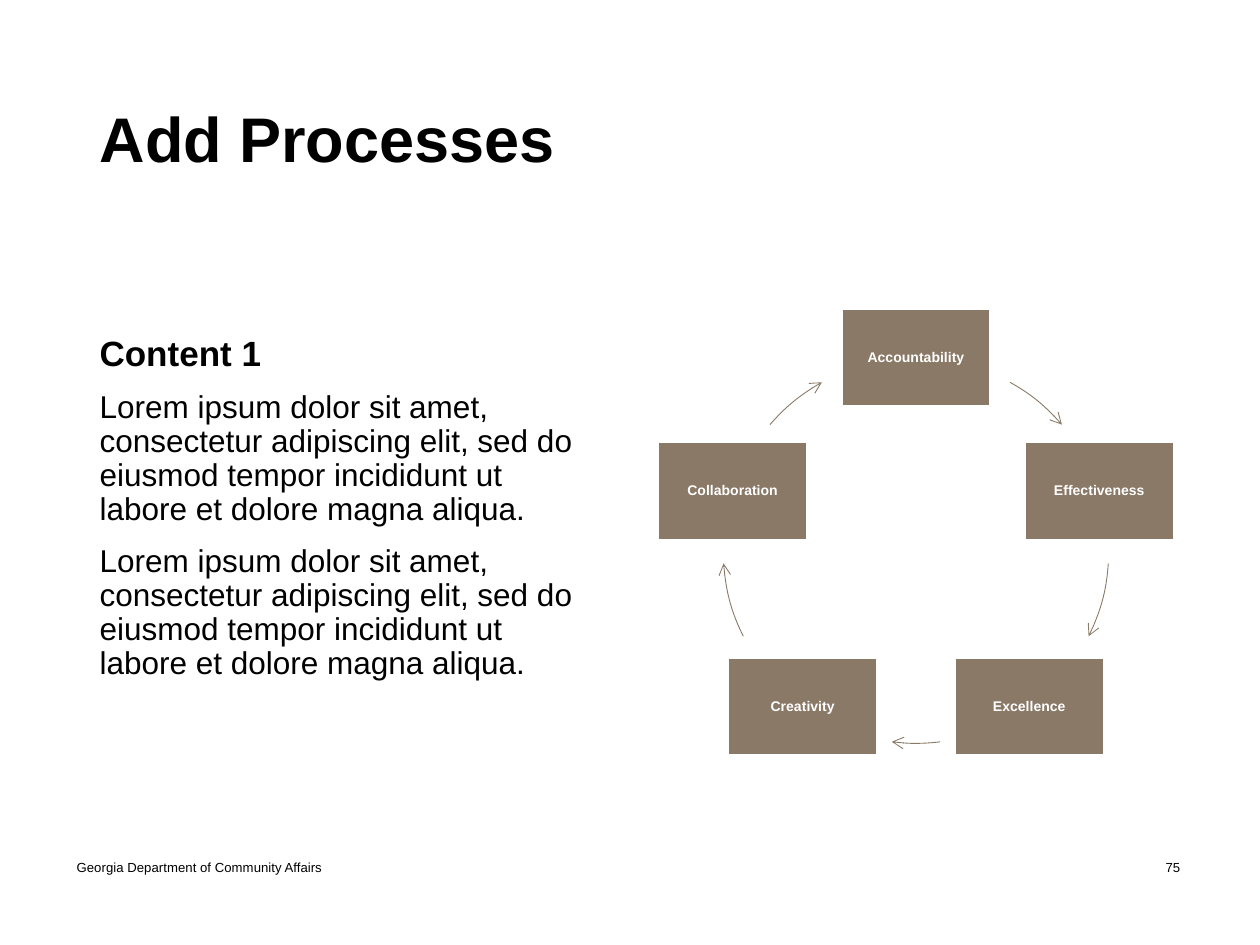
from math import cos, radians, sin

from lxml.etree import SubElement
from pptx import Presentation
from pptx.dml.color import RGBColor
from pptx.enum.shapes import MSO_SHAPE as Shape
from pptx.enum.text import MSO_ANCHOR as Anchor, MSO_AUTO_SIZE as AutoSize, PP_ALIGN as Align
from pptx.oxml.ns import qn
from pptx.util import Inches, Pt

COLORS = {"text": "000000", "accent": "8A7967", "light": "FFFFFF"}
LOREM = ("Lorem ipsum dolor sit amet, consectetur adipiscing elit, sed do "
         "eiusmod tempor incididunt ut labore et dolore magna aliqua.")
VALUES = ["Accountability", "Effectiveness", "Excellence", "Creativity", "Collaboration"]
# Start and end angles in degrees, clockwise from three o'clock
ARCS = [(299.2, 319.2), (3.8, 26.4), (82.8, 97.2), (153.6, 176.2), (220.8, 240.8)]
CENTER_X, CENTER_Y, RADIUS = 7.27, 4.37, 1.53
BOX_WIDTH, BOX_HEIGHT = 1.18, 0.77


def color(name):
    return RGBColor.from_string(COLORS[name])


class SlideBuilder:
    font = "Arial"

    def __init__(self, slide):
        self.slide = slide

    def style(self, paragraph, size, bold=False, fill="text", align=Align.LEFT, spacing=0.9):
        paragraph.alignment = align
        paragraph.line_spacing = spacing
        for run in paragraph.runs:
            run.font.name = self.font
            run.font.size = Pt(size)
            run.font.bold = bold
            run.font.color.rgb = color(fill)

    def place(self, shape, left, top, width, height):
        shape.left, shape.top = Inches(left), Inches(top)
        shape.width, shape.height = Inches(width), Inches(height)
        frame = shape.text_frame
        frame.word_wrap = True
        frame.auto_size = AutoSize.NONE
        frame.vertical_anchor = Anchor.MIDDLE
        return frame

    def title(self, text, *area):
        frame = self.place(self.slide.shapes.title, *area)
        frame.text = text
        self.style(frame.paragraphs[0], 36, bold=True)

    def body(self, heading, texts, *area):
        frame = self.place(self.slide.placeholders[1], *area)
        frame.margin_bottom = Inches(0.48)
        frame.text = "\n".join([heading, *texts])
        for index, paragraph in enumerate(frame.paragraphs):
            properties = paragraph._p.get_or_add_pPr()
            properties.set("marL", "0")
            properties.set("indent", "0")
            SubElement(properties, qn("a:buNone"))
            paragraph.space_before = Pt(10 if index else 0)
            self.style(paragraph, 18 if index else 20, bold=index == 0)

    def label(self, text, *area, align=Align.LEFT):
        frame = self.place(self.slide.shapes.add_textbox(0, 0, 0, 0), *area)
        frame.text = text
        self.style(frame.paragraphs[0], 7.5, align=align, spacing=1)

    def box(self, text, *area):
        shape = self.slide.shapes.add_shape(Shape.RECTANGLE, 0, 0, 0, 0)
        frame = self.place(shape, *area)
        shape.shadow.inherit = False
        shape.fill.solid()
        shape.fill.fore_color.rgb = color("accent")
        shape.line.color.rgb = color("light")
        shape.line.width = Pt(1)
        frame.margin_left = frame.margin_right = Inches(0.03)
        frame.margin_top = frame.margin_bottom = Inches(0.03)
        frame.text = text
        self.style(frame.paragraphs[0], 8, bold=True, fill="light", align=Align.CENTER)

    def arc_arrow(self, start, end):
        """Draw a clockwise arrow along the cycle's circle."""
        shape = self.slide.shapes.add_shape(
            Shape.ARC, Inches(CENTER_X - RADIUS), Inches(CENTER_Y - RADIUS),
            Inches(2 * RADIUS), Inches(2 * RADIUS))
        # Angles are stored in 60000ths of a degree, adjustments in 100000ths
        shape.adjustments[0], shape.adjustments[1] = start * 0.6, end * 0.6
        shape.shadow.inherit = False
        shape.fill.background()
        shape.line.color.rgb = color("accent")
        shape.line.width = Pt(0.5)
        SubElement(shape.line._get_or_add_ln(), qn("a:tailEnd"), type="arrow")

    def cycle(self, names, arcs):
        for index, (name, arc) in enumerate(zip(names, arcs)):
            angle = radians(index * 360 / len(names) - 90)
            self.box(name,
                     CENTER_X + RADIUS * cos(angle) - BOX_WIDTH / 2,
                     CENTER_Y + RADIUS * sin(angle) - BOX_HEIGHT / 2,
                     BOX_WIDTH, BOX_HEIGHT)
            self.arc_arrow(*arc)


def main():
    presentation = Presentation()
    presentation.slide_width, presentation.slide_height = Inches(10), Inches(7.5)
    builder = SlideBuilder(presentation.slides.add_slide(presentation.slide_layouts[1]))
    builder.title("Add Processes", 0.69, 0.4, 8.62, 1.45)
    builder.body("Content 1", [LOREM, LOREM], 0.69, 2, 4.09, 4.5)
    builder.cycle(VALUES, ARCS)
    builder.label("Georgia Department of Community Affairs", 0.51, 6.68, 3.38, 0.4)
    builder.label("75", 9.06, 6.51, 0.5, 0.74, align=Align.CENTER)
    presentation.save("out.pptx")


if __name__ == "__main__":
    main()
